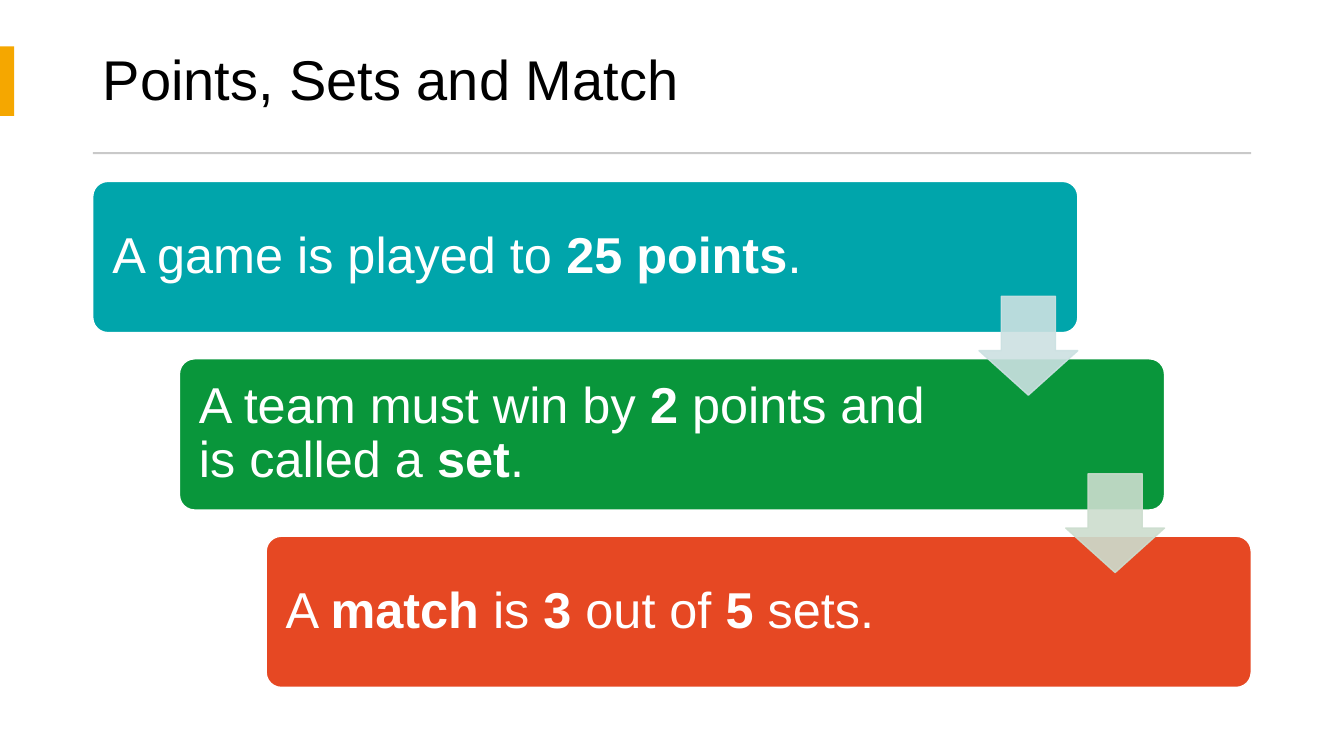
import pptx
import pptx.util
import pptx.dml.color
import pptx.enum.shapes
import pptx.enum.text
import lxml.etree
import pptx.oxml.ns

PX = 9144  # EMU per px, 100 px to the inch
SHAPES = pptx.enum.shapes.MSO_SHAPE
MIDDLE = pptx.enum.text.MSO_ANCHOR.MIDDLE
LEFT = pptx.enum.text.PP_ALIGN.LEFT


def color(value):
    return pptx.dml.color.RGBColor.from_string(value)


def add_block(page, kind, left, top, width, height, fill, line=None):
    block = page.shapes.add_shape(kind, left * PX, top * PX, width * PX, height * PX)
    block.shadow.inherit = False
    block.fill.solid()
    block.fill.fore_color.rgb = color(fill)
    if line:
        block.line.color.rgb = color(line)
        block.line.width = pptx.util.Pt(1)
    else:
        block.line.fill.background()
    return block


deck = pptx.Presentation()
deck.slide_width = 1333 * PX
deck.slide_height = 750 * PX
page = deck.slides.add_slide(deck.slide_layouts[5])

# Title with its accent bar and rule
title = page.shapes.title
title.left, title.top, title.width, title.height = 92 * PX, 27 * PX, 1149 * PX, 110 * PX
title.text_frame.vertical_anchor = MIDDLE
title.text_frame.text = "Points, Sets and Match"
para = title.text_frame.paragraphs[0]
para.alignment = LEFT
para.line_spacing = 0.9
para.font.name = "Arial"
para.font.size = pptx.util.Pt(40)
para.font.color.rgb = color("000000")
add_block(page, SHAPES.RECTANGLE, 0, 46, 14, 69, "F5A700")
add_block(page, SHAPES.RECTANGLE, 92, 151, 1149, 2, "C9C9C9")

# Staggered cards: fill, then (text, bold) spans
cards = [
    ("00A5AB", [("A game is played to ", False), ("25 points", True), (".", False)]),
    ("09963B", [("A team must win by ", False), ("2", True),
                (" points and is called a ", False), ("set", True), (".", False)]),
    ("E64823", [("A ", False), ("match", True), (" is ", False), ("3", True),
                (" out of ", False), ("5", True), (" sets.", False)]),
]
STEP_X, STEP_Y = 86, 176
for index, (fill, spans) in enumerate(cards):
    card = add_block(page, SHAPES.ROUNDED_RECTANGLE, 92 + index * STEP_X,
                     180 + index * STEP_Y, 977, 150, fill, "FFFFFF")
    card.adjustments[0] = 0.1
    frame = card.text_frame
    frame.word_wrap = True
    frame.vertical_anchor = MIDDLE
    frame.margin_left, frame.margin_right = 15 * PX, 200 * PX
    para = frame.paragraphs[0]
    para.alignment = LEFT
    para.line_spacing = 0.9
    para.font.name = "Arial"
    para.font.size = pptx.util.Pt(36)
    para.font.color.rgb = color("FFFFFF")
    for text, bold in spans:
        span = para.add_run()
        span.text = text
        span.font.bold = bold

# Translucent arrows from each card to the next
for index, fill in enumerate(["CCE1E2", "CCDDCE"]):
    arrow = add_block(page, SHAPES.DOWN_ARROW, 971 + index * STEP_X,
                      294 + index * STEP_Y, 98, 98, fill, fill)
    arrow.adjustments[0] = 0.55
    arrow.adjustments[1] = 0.45
    for tint in arrow.element.spPr.iter(pptx.oxml.ns.qn("a:srgbClr")):
        lxml.etree.SubElement(tint, pptx.oxml.ns.qn("a:alpha"), val="90000")

deck.save("out.pptx")
